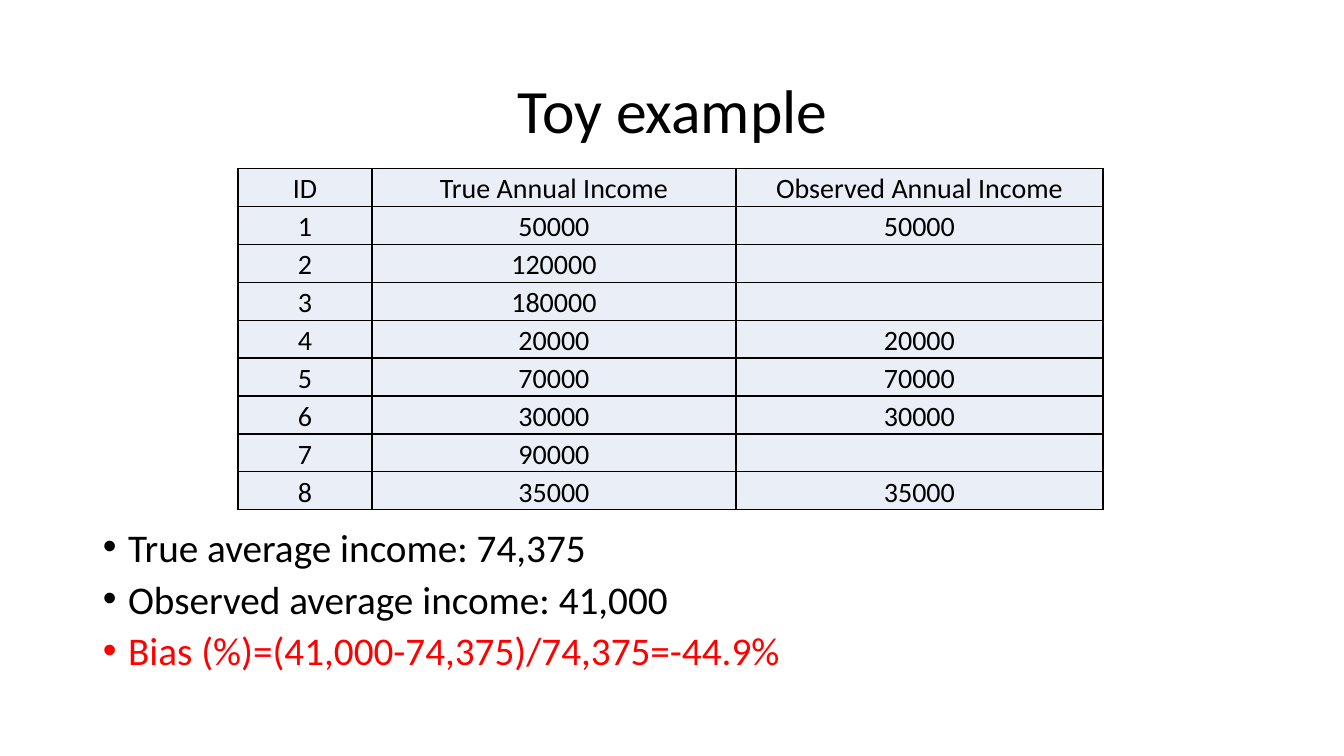
from dataclasses import dataclass

from lxml import etree
from pptx import Presentation
from pptx.dml.color import RGBColor
from pptx.enum.text import MSO_ANCHOR, MSO_AUTO_SIZE, PP_ALIGN
from pptx.oxml.ns import qn
from pptx.util import Inches, Pt

CENTER = PP_ALIGN.CENTER
LEFT = PP_ALIGN.LEFT
TOP = MSO_ANCHOR.TOP
MIDDLE = MSO_ANCHOR.MIDDLE
BOTTOM = MSO_ANCHOR.BOTTOM
NO_AUTOFIT = MSO_AUTO_SIZE.NONE
TITLE_AND_CONTENT = 1


@dataclass(frozen=True)
class Theme:
    font: str = "Calibri"
    ink: str = "000000"
    accent: str = "FF0000"
    cell_fill: str = "EAEFF7"
    border: str = "000000"
    border_width: float = 1
    title_size: int = 44
    body_size: int = 28
    table_size: int = 20


class IncomeSlide:
    def __init__(self, deck, theme):
        self.theme = theme
        self.page = deck.slides.add_slide(deck.slide_layouts[TITLE_AND_CONTENT])

    def style(self, para, size, align, color):
        para.alignment = align
        para.font.name = self.theme.font
        para.font.size = Pt(size)
        para.font.color.rgb = RGBColor.from_string(color)

    def place(self, shape, left, top, width, height):
        shape.left, shape.top = Inches(left), Inches(top)
        shape.width, shape.height = Inches(width), Inches(height)

    def title(self, text, bounds):
        box = self.page.shapes.title
        self.place(box, *bounds)
        frame = box.text_frame
        frame.text = text
        frame.auto_size = NO_AUTOFIT
        frame.vertical_anchor = MIDDLE
        para = frame.paragraphs[0]
        para.line_spacing = 0.9
        self.style(para, self.theme.title_size, CENTER, self.theme.ink)

    def bullets(self, items, bounds):
        box = self.page.placeholders[1]
        self.place(box, *bounds)
        frame = box.text_frame
        frame.text = "\n".join(text for text, color in items)
        frame.auto_size = NO_AUTOFIT
        frame.vertical_anchor = TOP
        for index, (para, (text, color)) in enumerate(zip(frame.paragraphs, items)):
            para.line_spacing = 0.8
            para.space_before = Pt(10 if index else 0)
            props = para._p.get_or_add_pPr()
            props.set("marL", str(Inches(0.25)))
            props.set("indent", str(-Inches(0.25)))
            etree.SubElement(props, qn("a:buFont"), typeface="Arial")
            etree.SubElement(props, qn("a:buChar"), char="•")
            self.style(para, self.theme.body_size, LEFT, color)

    def outline(self, cell):
        props = cell._tc.get_or_add_tcPr()
        for side in ("lnL", "lnR", "lnT", "lnB"):
            line = etree.SubElement(props, qn(f"a:{side}"), w=str(Pt(self.theme.border_width)))
            fill = etree.SubElement(line, qn("a:solidFill"))
            etree.SubElement(fill, qn("a:srgbClr"), val=self.theme.border)

    def table(self, rows, left, top, widths, row_height):
        frame = self.page.shapes.add_table(
            len(rows), len(widths), Inches(left), Inches(top),
            Inches(sum(widths)), Inches(row_height * len(rows)))
        table = frame.table
        for column, width in zip(table.columns, widths):
            column.width = Inches(width)
        for row, values in zip(table.rows, rows):
            row.height = Inches(row_height)
            for cell, value in zip(row.cells, values):
                self.outline(cell)
                cell.fill.solid()
                cell.fill.fore_color.rgb = RGBColor.from_string(self.theme.cell_fill)
                cell.margin_left = cell.margin_right = cell.margin_top = Inches(0.01)
                cell.margin_bottom = 0
                cell.vertical_anchor = BOTTOM
                cell.text = value
                self.style(cell.text_frame.paragraphs[0], self.theme.table_size,
                           CENTER, self.theme.ink)


def main():
    deck = Presentation()
    deck.slide_width, deck.slide_height = Inches(13.33), Inches(7.5)
    theme = Theme()
    slide = IncomeSlide(deck, theme)

    true_incomes = (50000, 120000, 180000, 20000, 70000, 30000, 90000, 35000)
    missing_ids = {2, 3, 7}
    rows = [("ID", "True Annual Income", "Observed Annual Income")]
    for person, income in enumerate(true_incomes, start=1):
        observed = "" if person in missing_ids else str(income)
        rows.append((str(person), str(income), observed))

    slide.title("Toy example", (0.92, 0.4, 11.5, 1.45))
    slide.bullets([
        ("True average income: 74,375", theme.ink),
        ("Observed average income: 41,000", theme.ink),
        ("Bias (%)=(41,000-74,375)/74,375=-44.9%", theme.accent),
    ], (0.92, 5.23, 11.5, 1.53))
    slide.table(rows, 2.36, 1.67, (1.33, 3.61, 3.64), 3.39 / len(rows))
    deck.save("out.pptx")


if __name__ == "__main__":
    main()
